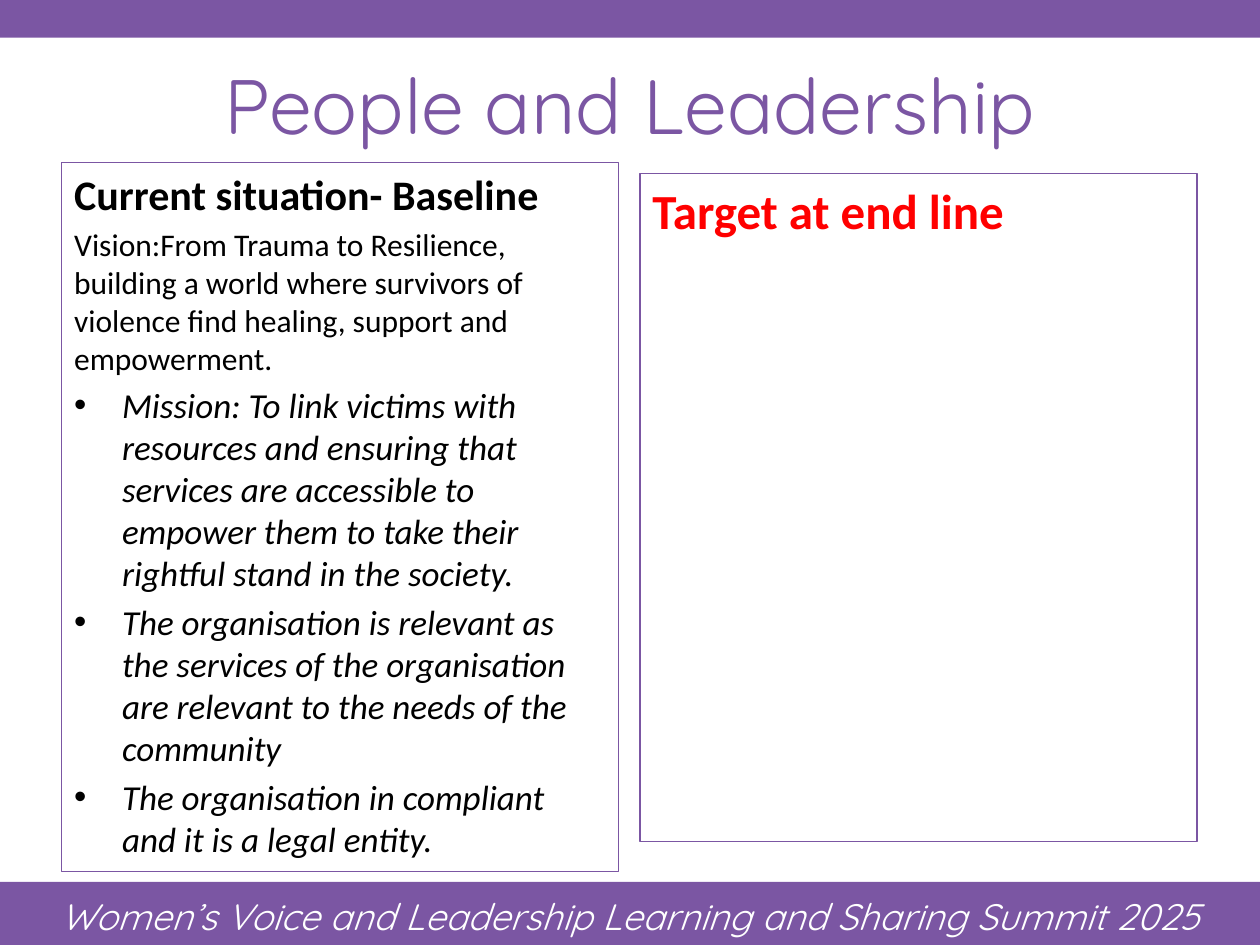
from pptx import Presentation
from pptx.dml.color import RGBColor
from pptx.enum.shapes import MSO_SHAPE
from pptx.enum.text import MSO_ANCHOR, PP_ALIGN
from pptx.oxml import parse_xml
from pptx.oxml.ns import nsdecls
from pptx.util import Inches, Pt

COLORS = {"purple": "7B56A3", "white": "FFFFFF", "black": "000000", "red": "FF0000"}
HANGING_INDENT = Inches(0.38)

BASELINE = [
    ("Current situation- Baseline", "heading", 24),
    ("Vision:From Trauma to Resilience, building a world where survivors of "
     "violence find healing, support and empowerment.", "plain", 18),
    ("Mission: To link victims with resources and ensuring that services are "
     "accessible to empower them to take their rightful stand in the society.", "bullet", 20),
    ("The organisation is relevant as the services of the organisation are "
     "relevant to the needs of the community", "bullet", 20),
    ("The organisation in compliant and it is a legal entity.", "bullet", 20),
]
TARGET = [("Target at end line", "heading", 28)]


def rgb(name):
    """Return the named colour."""
    return RGBColor.from_string(COLORS[name])


def style_font(paragraph, name, size, color, bold=False, italic=False):
    """Set the font of a whole paragraph."""
    font = paragraph.font
    font.name, font.size = name, Pt(size)
    font.bold, font.italic = bold, italic
    font.color.rgb = rgb(color)


def add_bullet(paragraph):
    """Give a paragraph a round bullet with a hanging indent."""
    properties = paragraph._p.get_or_add_pPr()
    properties.set("marL", str(HANGING_INDENT))
    properties.set("indent", str(-HANGING_INDENT))
    properties.append(parse_xml(f'<a:buFont {nsdecls("a")} typeface="Arial"/>'))
    properties.append(parse_xml(f'<a:buChar {nsdecls("a")} char="•"/>'))


def add_band(slide, box):
    """Draw a solid purple band across the slide."""
    band = slide.shapes.add_shape(MSO_SHAPE.RECTANGLE, *map(Inches, box))
    band.shadow.inherit = False
    band.fill.solid()
    band.fill.fore_color.rgb = rgb("purple")
    band.line.fill.background()


def add_centered_text(slide, box, text, size, color, italic=False):
    """Place one centred line of Quicksand and return its text frame."""
    frame = slide.shapes.add_textbox(*map(Inches, box)).text_frame
    frame.word_wrap = True
    paragraph = frame.paragraphs[0]
    paragraph.text = text
    paragraph.alignment = PP_ALIGN.CENTER
    style_font(paragraph, "Quicksand", size, color, italic=italic)
    return frame


def add_panel(slide, box, entries, heading_color):
    """Draw an outlined panel holding a heading and its entries."""
    panel = slide.shapes.add_shape(MSO_SHAPE.RECTANGLE, *map(Inches, box))
    panel.shadow.inherit = False
    panel.fill.background()
    panel.line.color.rgb = rgb("purple")
    panel.line.width = Pt(0.75)
    frame = panel.text_frame
    frame.word_wrap = True
    frame.vertical_anchor = MSO_ANCHOR.TOP
    for index, (text, kind, size) in enumerate(entries):
        paragraph = frame.add_paragraph() if index else frame.paragraphs[0]
        paragraph.text = text
        paragraph.alignment = PP_ALIGN.LEFT
        paragraph.space_before = Pt(size * 0.2)
        color = heading_color if kind == "heading" else "black"
        style_font(paragraph, "Calibri", size, color, kind == "heading", kind == "bullet")
        if kind == "bullet":
            add_bullet(paragraph)


def main():
    """Build the slide and save it."""
    presentation = Presentation()
    presentation.slide_width, presentation.slide_height = Inches(10), Inches(7.5)
    slide = presentation.slides.add_slide(presentation.slide_layouts[6])
    add_band(slide, (0, 7, 10, 0.5))
    add_band(slide, (0, 0, 10, 0.3))
    footer = add_centered_text(
        slide, (0.17, 7.02, 9.66, 0.48),
        "Women’s Voice and Leadership Learning and Sharing Summit 2025", 21, "white", italic=True)
    footer.paragraphs[0].line_spacing = 1.07
    title = add_centered_text(slide, (0, 0.36, 10, 0.92), "People and Leadership", 44, "purple")
    title.vertical_anchor = MSO_ANCHOR.MIDDLE
    add_panel(slide, (0.49, 1.29, 4.42, 5.63), BASELINE, "black")
    add_panel(slide, (5.08, 1.38, 4.42, 5.3), TARGET, "red")
    presentation.save("out.pptx")


if __name__ == "__main__":
    main()
